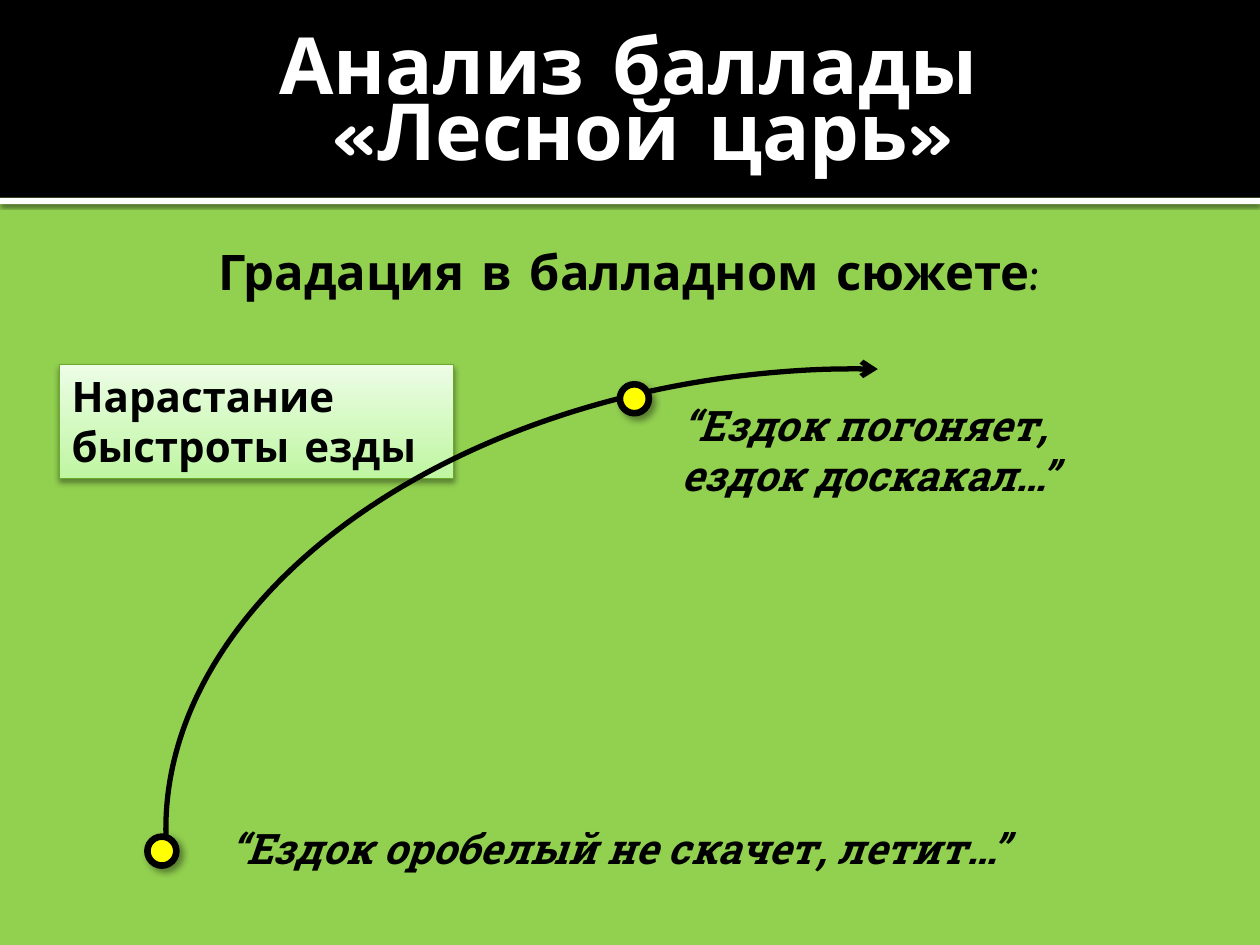
from dataclasses import dataclass

from lxml.etree import SubElement
from pptx import Presentation
from pptx.dml.color import RGBColor
from pptx.enum.shapes import MSO_SHAPE
from pptx.enum.text import MSO_ANCHOR, PP_ALIGN
from pptx.oxml import parse_xml
from pptx.oxml.ns import nsdecls, qn
from pptx.util import Inches, Pt


@dataclass(frozen=True)
class Theme:
    """Colours, fonts and type sizes of the slide."""
    background: str = "92D050"
    dark: str = "000000"
    light: str = "FFFFFF"
    marker: str = "FFFF00"
    label_edge: str = "6BA929"
    label_bottom: str = "BFF6A2"
    label_top: str = "EDFDE6"
    heading_font: str = "Comic Neue"
    quote_font: str = "Roboto Slab"
    title_size: int = 45
    subtitle_size: int = 28
    body_size: int = 24


THEME = Theme()


def color(value):
    """Turn a hex value into a colour."""
    return RGBColor.from_string(value)


def format_text(shape, text, font_name, size, ink=THEME.dark, italic=False,
                alignment=PP_ALIGN.LEFT):
    """Write one wrapped paragraph and format its runs."""
    frame = shape.text_frame
    frame.text = text
    frame.word_wrap = True
    paragraph = frame.paragraphs[0]
    paragraph.alignment = alignment
    for run in paragraph.runs:
        run.font.name = font_name
        run.font.size = Pt(size)
        run.font.bold = True
        run.font.italic = italic
        run.font.color.rgb = color(ink)


def add_shadow(shape, opacity, blur, distance, angle):
    """Give a shape an outer shadow."""
    shape.shadow.inherit = False
    effects = shape._element.spPr.find(qn("a:effectLst"))
    effects.append(parse_xml(
        f'<a:outerShdw {nsdecls("a")} blurRad="{Pt(blur)}" dist="{Pt(distance)}" '
        f'dir="{angle * 60000}" algn="ctr" rotWithShape="0">'
        f'<a:srgbClr val="{THEME.dark}"><a:alpha val="{opacity * 1000}"/></a:srgbClr>'
        '</a:outerShdw>'))


def add_shape(slide, kind, box, fill=None, line=None, line_width=1):
    """Add a preset shape with plain fill and line."""
    shape = slide.shapes.add_shape(kind, *map(Inches, box))
    shape.shadow.inherit = False
    if fill:
        shape.fill.solid()
        shape.fill.fore_color.rgb = color(fill)
    else:
        shape.fill.background()
    if line:
        shape.line.color.rgb = color(line)
        shape.line.width = Pt(line_width)
    else:
        shape.line.fill.background()
    return shape


def add_header(slide, box, text):
    """Place the title on a dark band with a light rule under it."""
    left, top, width, height = box
    rule = add_shape(slide, MSO_SHAPE.RECTANGLE, (left, top + height, width, 0.05),
                     THEME.light)
    add_shadow(rule, 60, 2.5, 0.8, 90)
    band = add_shape(slide, MSO_SHAPE.RECTANGLE, box, THEME.dark)
    title = slide.shapes.title
    for shape in (rule, band):
        title._element.addprevious(shape._element)
    title.left, title.top = Inches(left + 1.95), Inches(top + 0.17)
    title.width, title.height = Inches(6.25), Inches(height - 0.2)
    format_text(title, text, THEME.heading_font, THEME.title_size, THEME.light,
                alignment=PP_ALIGN.CENTER)
    frame = title.text_frame
    frame.vertical_anchor = MSO_ANCHOR.MIDDLE
    frame.margin_left = Inches(0.1)
    frame.margin_right = frame.margin_top = frame.margin_bottom = Inches(0.05)
    frame.paragraphs[0].line_spacing = 0.7


def add_subtitle(slide, box, text):
    """Place the centred subtitle."""
    subtitle = slide.shapes.add_textbox(*map(Inches, box))
    format_text(subtitle, text, THEME.heading_font, THEME.subtitle_size,
                alignment=PP_ALIGN.CENTER)


def add_quote(slide, box, text):
    """Place a quotation from the ballad."""
    quote = slide.shapes.add_textbox(*map(Inches, box))
    format_text(quote, text, THEME.quote_font, THEME.body_size, italic=True)


def add_label(slide, box, text):
    """Place the shaded label that names the curve."""
    label = add_shape(slide, MSO_SHAPE.RECTANGLE, box, line=THEME.label_edge,
                      line_width=0.5)
    label.fill.gradient()
    label.fill.gradient_angle = 90
    stops = label.fill.gradient_stops
    for stop, value, position in zip(stops, (THEME.label_bottom, THEME.label_top), (0, 1)):
        stop.color.rgb = color(value)
        stop.position = position
    add_shadow(label, 38, 3.5, 2, 90)
    format_text(label, text, THEME.heading_font, THEME.body_size)
    label.text_frame.vertical_anchor = MSO_ANCHOR.TOP


def add_curve(slide, box, marker_corners):
    """Draw the rising arrow and the markers on it."""
    arc = add_shape(slide, MSO_SHAPE.ARC, box, line=THEME.dark, line_width=3)
    arc.rotation = 264.8
    arc.adjustments[0], arc.adjustments[1] = 162, 8.729
    SubElement(arc.line._get_or_add_ln(), qn("a:tailEnd"), type="arrow")
    for left, top in marker_corners:
        marker = add_shape(slide, MSO_SHAPE.OVAL, (left, top, 0.23, 0.23),
                           THEME.marker, THEME.dark, 3.78)
        add_shadow(marker, 40, 4, 3, 45)


def main():
    """Build and save the slide."""
    presentation = Presentation()
    presentation.slide_width, presentation.slide_height = Inches(10), Inches(7.5)
    slide = presentation.slides.add_slide(presentation.slide_layouts[5])
    slide.background.fill.solid()
    slide.background.fill.fore_color.rgb = color(THEME.background)
    add_header(slide, (0, 0, 10, 1.57), "Анализ баллады \v«Лесной царь»")
    add_subtitle(slide, (0.62, 1.87, 8.75, 0.57), "Градация в балладном сюжете:")
    add_quote(slide, (1.72, 6.48, 7.5, 0.5), "“Ездок оробелый не скачет, летит…”")
    add_quote(slide, (5.31, 3.12, 3.83, 0.91), "“Ездок погоняет, ездок доскакал…”")
    add_label(slide, (0.47, 2.89, 3.13, 0.91), "Нарастание быстроты езды")
    add_curve(slide, (3.04, 1.21, 6.74, 10.21), ((4.92, 3.05), (1.17, 6.64)))
    presentation.save("out.pptx")


if __name__ == "__main__":
    main()
